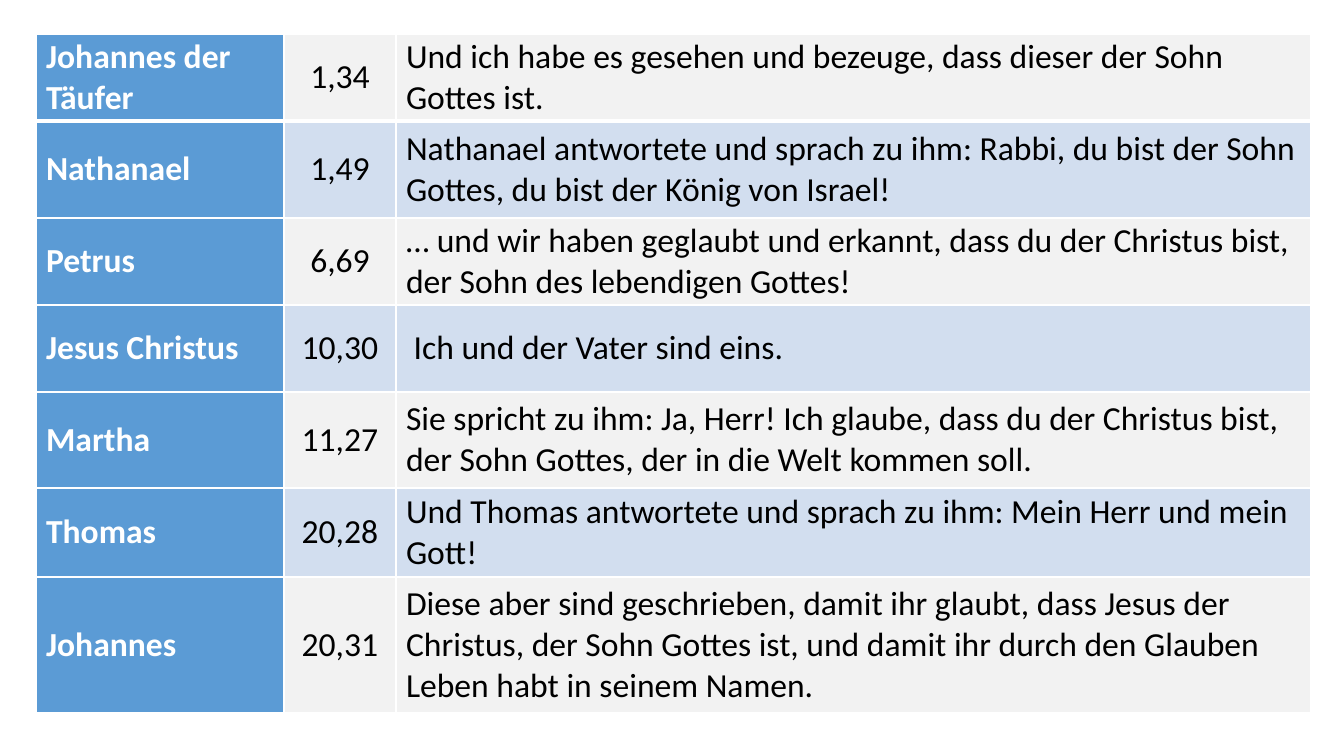
"""Build a slide with a table of confessions of the Son of God in John."""
import lxml.etree
import pptx
import pptx.dml.color
import pptx.enum.text
import pptx.oxml.ns
import pptx.util

EMU_PER_PX = 914400 / 100.8
WHITE = pptx.dml.color.RGBColor(0xFF, 0xFF, 0xFF)
BLACK = pptx.dml.color.RGBColor(0x00, 0x00, 0x00)
BLUE = pptx.dml.color.RGBColor(0x5B, 0x9B, 0xD5)
PALE_BLUE = pptx.dml.color.RGBColor(0xD2, 0xDE, 0xEF)
PALE_GREY = pptx.dml.color.RGBColor(0xF2, 0xF2, 0xF2)

COLUMN_WIDTHS = [248, 112, 915]
ROW_HEIGHTS = [87, 97, 87, 87, 96, 89, 136]
CONFESSIONS = [
    ("Johannes der Täufer", "1,34",
     "Und ich habe es gesehen und bezeuge, dass dieser der Sohn Gottes ist."),
    ("Nathanael", "1,49",
     "Nathanael antwortete und sprach zu ihm: Rabbi, du bist der Sohn Gottes, "
     "du bist der König von Israel!"),
    ("Petrus", "6,69",
     "… und wir haben geglaubt und erkannt, dass du der Christus bist, "
     "der Sohn des lebendigen Gottes!"),
    ("Jesus Christus", "10,30", " Ich und der Vater sind eins."),
    ("Martha", "11,27",
     "Sie spricht zu ihm: Ja, Herr! Ich glaube, dass du der Christus bist, "
     "der Sohn Gottes, der in die Welt kommen soll."),
    ("Thomas", "20,28",
     "Und Thomas antwortete und sprach zu ihm: Mein Herr und mein Gott!"),
    ("Johannes", "20,31",
     "Diese aber sind geschrieben, damit ihr glaubt, dass Jesus der Christus, "
     "der Sohn Gottes ist, und damit ihr durch den Glauben Leben habt "
     "in seinem Namen."),
]
SPEAKER, VERSE, QUOTE = range(3)
ALIGNMENTS = [pptx.enum.text.PP_ALIGN.LEFT, pptx.enum.text.PP_ALIGN.CENTER,
              pptx.enum.text.PP_ALIGN.LEFT]
CELL_FORMAT = {
    "margin_left": pptx.util.Inches(0.1),
    "margin_right": pptx.util.Inches(0.1),
    "margin_top": 0,
    "margin_bottom": 0,
    "vertical_anchor": pptx.enum.text.MSO_ANCHOR.MIDDLE,
}
FONT_FORMAT = {"name": "Calibri", "size": pptx.util.Pt(24)}


def px(length):
    """Turn pixels into EMU."""
    return pptx.util.Emu(round(length * EMU_PER_PX))


def apply_format(target, values):
    """Set each named attribute on the target."""
    for name, value in values.items():
        setattr(target, name, value)


def fill_cell(cell, color):
    """Give a cell a solid fill."""
    cell.fill.solid()
    cell.fill.fore_color.rgb = color


def border_cell(cell, widths):
    """Draw white borders with widths in points, keyed by side."""
    properties = cell._tc.get_or_add_tcPr()
    for position, (side, width) in enumerate(widths.items()):
        line = lxml.etree.Element(pptx.oxml.ns.qn(f"a:ln{side}"),
                                  w=str(pptx.util.Pt(width)))
        fill = lxml.etree.SubElement(line, pptx.oxml.ns.qn("a:solidFill"))
        lxml.etree.SubElement(fill, pptx.oxml.ns.qn("a:srgbClr"), val=str(WHITE))
        properties.insert(position, line)


def write_cell(cell, text, alignment, is_speaker):
    """Write the text of a cell."""
    apply_format(cell, CELL_FORMAT)
    para = cell.text_frame.paragraphs[0]
    para.alignment = alignment
    span = para.add_run()
    span.text = text
    apply_format(span.font, {**FONT_FORMAT, "bold": is_speaker})
    span.font.color.rgb = WHITE if is_speaker else BLACK


def add_confessions(page):
    """Add the table of speakers, verses and quotes."""
    frame = page.shapes.add_table(
        len(ROW_HEIGHTS), len(COLUMN_WIDTHS), px(36), px(34),
        px(sum(COLUMN_WIDTHS)), px(sum(ROW_HEIGHTS)))
    table = frame.table
    apply_format(table, {"first_row": False, "horz_banding": False})
    for column, width in zip(table.columns, COLUMN_WIDTHS):
        column.width = px(width)
    for row, height in zip(table.rows, ROW_HEIGHTS):
        row.height = px(height)
    for row_index, confession in enumerate(CONFESSIONS):
        band = PALE_BLUE if row_index % 2 else PALE_GREY
        widths = {"L": 1, "R": 1, "T": 3 if row_index == 1 else 1,
                  "B": 3 if row_index == 0 else 1}
        for column_index, text in enumerate(confession):
            cell = table.cell(row_index, column_index)
            is_speaker = column_index == SPEAKER
            write_cell(cell, text, ALIGNMENTS[column_index], is_speaker)
            fill_cell(cell, BLUE if is_speaker else band)
            border_cell(cell, widths)


def main():
    """Build and save the deck."""
    deck = pptx.Presentation()
    apply_format(deck, {"slide_width": px(1344), "slide_height": px(756)})
    page = deck.slides.add_slide(deck.slide_layouts[6])
    add_confessions(page)
    deck.save("out.pptx")


if __name__ == "__main__":
    main()
